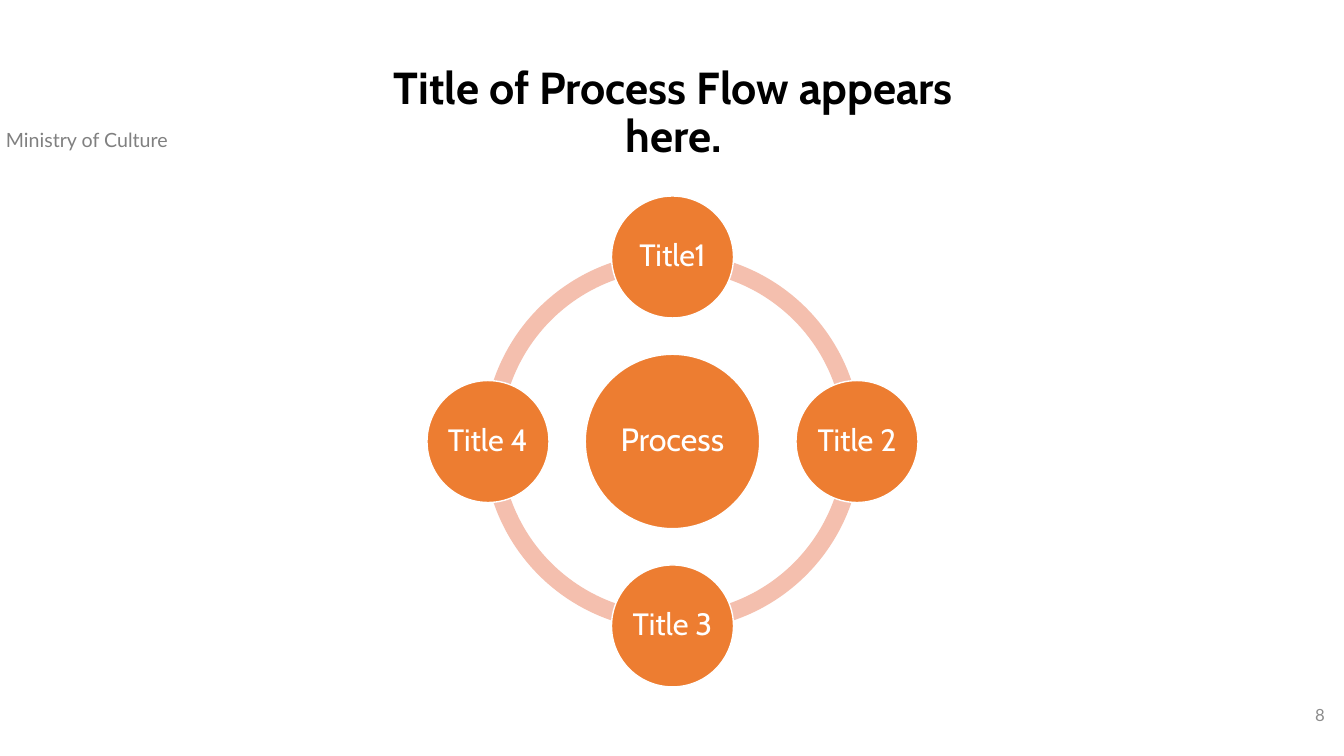
from dataclasses import dataclass
from math import cos, radians, sin

from pptx import Presentation
from pptx.dml.color import RGBColor
from pptx.enum.shapes import MSO_SHAPE
from pptx.enum.text import MSO_ANCHOR, MSO_AUTO_SIZE, PP_ALIGN
from pptx.shapes.autoshape import Shape
from pptx.slide import Slide
from pptx.util import Inches, Pt


@dataclass(frozen=True)
class Theme:
    heading_font: str = "Cabin"
    body_font: str = "Lato"
    accent: str = "ED7D31"
    ring: str = "F4BFAE"
    white: str = "FFFFFF"
    black: str = "000000"
    header_grey: str = "808080"
    number_grey: str = "8C8C8C"
    title_size: int = 32
    hub_size: int = 23
    step_size: int = 22
    header_size: int = 14
    number_size: int = 12


@dataclass(frozen=True)
class Box:
    left: float
    top: float
    width: float
    height: float

    def emu(self) -> tuple[int, int, int, int]:
        return (Inches(self.left), Inches(self.top),
                Inches(self.width), Inches(self.height))


@dataclass(frozen=True)
class TextStyle:
    font: str
    size: int
    color: str
    align: PP_ALIGN
    anchor: MSO_ANCHOR = MSO_ANCHOR.TOP
    bold: bool = False
    line_spacing: float = 1.0


@dataclass(frozen=True)
class Disc:
    label: str
    x: float
    y: float
    diameter: float
    size: int


THEME = Theme()
CENTER_X, CENTER_Y = 6.67, 4.38
ORBIT = 1.83
RING_DIAMETER = 3.75
RING_THICKNESS = 0.046
DEGREES_TO_ADJUSTMENT = 0.6
STEPS = ("Title1", "Title 2", "Title 3", "Title 4")


def square(x: float, y: float, side: float) -> Box:
    return Box(x - side / 2, y - side / 2, side, side)


def write(target: Shape, text: str, style: TextStyle) -> None:
    frame = target.text_frame
    frame.text = text
    frame.word_wrap = True
    frame.auto_size = MSO_AUTO_SIZE.NONE
    frame.vertical_anchor = style.anchor
    paragraph = frame.paragraphs[0]
    paragraph.alignment = style.align
    paragraph.line_spacing = style.line_spacing
    font = paragraph.runs[0].font
    font.name = style.font
    font.size = Pt(style.size)
    font.bold = style.bold
    font.color.rgb = RGBColor.from_string(style.color)


def add_filled(slide: Slide, kind: MSO_SHAPE, box: Box, color: str) -> Shape:
    filled = slide.shapes.add_shape(kind, *box.emu())
    filled.shadow.inherit = False
    filled.fill.solid()
    filled.fill.fore_color.rgb = RGBColor.from_string(color)
    filled.line.fill.background()
    return filled


def add_arc(slide: Slide, start: int) -> None:
    box = square(CENTER_X, CENTER_Y, RING_DIAMETER)
    arc = add_filled(slide, MSO_SHAPE.BLOCK_ARC, box, THEME.ring)
    arc.adjustments[0] = start * DEGREES_TO_ADJUSTMENT
    arc.adjustments[1] = (start + 90) % 360 * DEGREES_TO_ADJUSTMENT
    arc.adjustments[2] = RING_THICKNESS


def add_disc(slide: Slide, disc: Disc) -> None:
    box = square(disc.x, disc.y, disc.diameter)
    circle = add_filled(slide, MSO_SHAPE.OVAL, box, THEME.accent)
    circle.line.color.rgb = RGBColor.from_string(THEME.white)
    circle.line.width = Pt(1)
    frame = circle.text_frame
    frame.margin_left = frame.margin_right = Inches(0.03)
    frame.margin_top = frame.margin_bottom = Inches(0.03)
    write(circle, disc.label, TextStyle(
        THEME.heading_font, disc.size, THEME.white, PP_ALIGN.CENTER,
        MSO_ANCHOR.MIDDLE, line_spacing=0.9))


def add_label(slide: Slide, text: str, box: Box, style: TextStyle) -> None:
    write(slide.shapes.add_textbox(*box.emu()), text, style)


def add_title(slide: Slide, text: str, box: Box) -> None:
    title = slide.shapes.title
    title.left, title.top, title.width, title.height = box.emu()
    write(title, text, TextStyle(
        THEME.heading_font, THEME.title_size, THEME.black, PP_ALIGN.CENTER,
        bold=True, line_spacing=0.9))


def step_disc(index: int, label: str) -> Disc:
    angle = radians(90 * index - 90)
    return Disc(label, CENTER_X + ORBIT * cos(angle),
                CENTER_Y + ORBIT * sin(angle), 1.21, THEME.step_size)


def main() -> None:
    deck = Presentation()
    deck.slide_width, deck.slide_height = Inches(13.33), Inches(7.5)
    slide = deck.slides.add_slide(deck.slide_layouts[5])

    add_title(slide, "Title of Process Flow appears here.",
              Box(3.28, 0.6, 6.8, 1.07))
    add_label(slide, "Ministry of Culture", Box(-0.04, 1.22, 2.9, 0.34),
              TextStyle(THEME.body_font, THEME.header_size,
                        THEME.header_grey, PP_ALIGN.LEFT))
    add_label(slide, "8", Box(10.24, 6.89, 3, 0.4),
              TextStyle(THEME.body_font, THEME.number_size,
                        THEME.number_grey, PP_ALIGN.RIGHT, MSO_ANCHOR.MIDDLE))

    for start in range(0, 360, 90):
        add_arc(slide, start)
    add_disc(slide, Disc("Process", CENTER_X, CENTER_Y, 1.73, THEME.hub_size))
    for index, label in enumerate(STEPS):
        add_disc(slide, step_disc(index, label))

    deck.save("out.pptx")


if __name__ == "__main__":
    main()
